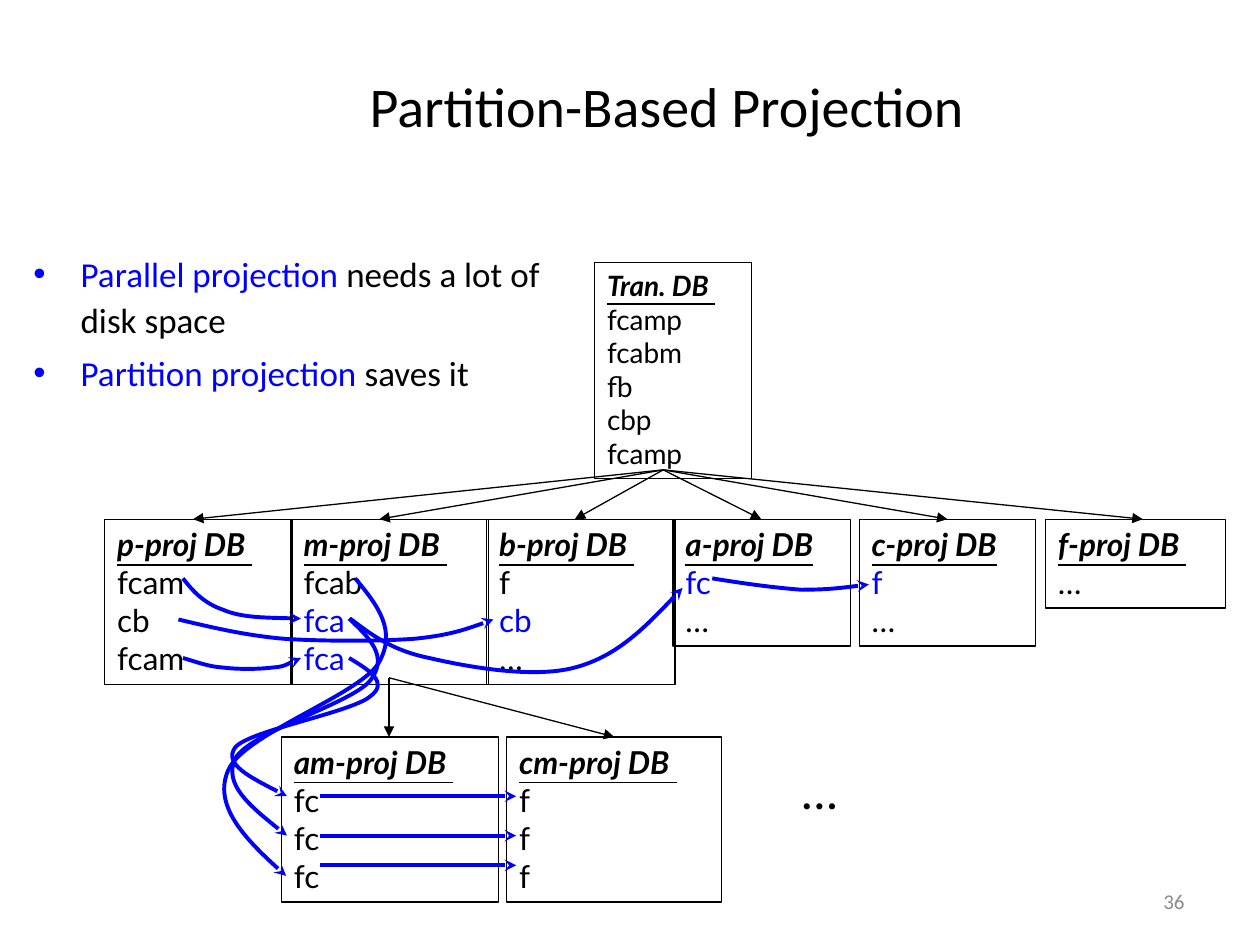
"""Builds the slide on partition-based projection of a transaction database."""
from lxml import etree
from pptx import Presentation
from pptx.dml.color import RGBColor
from pptx.enum import shapes, text
from pptx.oxml.ns import qn
from pptx.util import Pt

BLACK = RGBColor(0, 0, 0)
BLUE = RGBColor(0, 0, 255)
GREY = RGBColor(0x8C, 0x8C, 0x8C)
ROW_TOP, SUB_TOP = 296.7, 421.1
ROOT = (379, 268.5)
SUB_ROOT = (222.3, 387.3)

PROJECTIONS = [
    (59.9, 107.3, 110.3, ["p-proj DB ", "fcam", "cb", "fcam"], ()),
    (166.4, 113, 216.8, ["m-proj DB ", "fcab", "fca", "fca"], (2, 3)),
    (278.1, 107.6, 328.5, ["b-proj DB ", "f", "cb", "…"], (2,)),
    (384.6, 101.5, 435, ["a-proj DB", "fc", "…"], (1,)),
    (491, 100.6, 541.4, ["c-proj DB", "f", "…"], (1,)),
    (597.5, 103, 653, ["f-proj DB ", "…"], ()),
]
SUB_PROJECTIONS = [
    (160.8, 124, 222.3, ["am-proj DB ", "fc", "fc", "fc"], ()),
    (289.5, 123, 351, ["cm-proj DB ", "f", "f", "f"], ()),
]
CURVES = [
    [(104.5, 330.5), (110, 337.5), (116, 344.5), (127.5, 348.5),
     (138, 353), (155.5, 353), (172, 353.5)],
    [(200, 353.5), (211.5, 362), (223, 371.5), (245, 376), (266.5, 381),
     (304.5, 388), (328.5, 381.5), (353, 375), (371.5, 355.5), (390, 336)],
    [(407, 330.5), (425, 333.5), (443.5, 336), (458, 337),
     (473, 337), (484.5, 335.5), (496.5, 334)],
    [(104.5, 376), (111.5, 378), (119, 381), (127.5, 381.5), (135.5, 382.5),
     (147.5, 382.5), (155.5, 381.5), (162.5, 381), (167, 378), (172, 376)],
    [(199.5, 376), (211, 383), (222.5, 390), (211.5, 398), (201, 407),
     (142.5, 417.5), (134.5, 427), (127.5, 436.5), (145.5, 445.5), (164, 455)],
    [(199.5, 353.5), (211, 364.5), (222.5, 375), (211.5, 389), (201, 402),
     (142.5, 418.5), (134.5, 433.5), (127.5, 448), (145.5, 463), (164, 477.5)],
    [(203, 330.5), (215.5, 345.5), (227.5, 360.5), (216, 379.5), (204, 397.5),
     (139, 420), (130.5, 440), (121.5, 460), (142.5, 482), (163.5, 500.5)],
    [(102, 354), (121, 358.5), (139.5, 363), (162, 365), (184.5, 366.5),
     (216.5, 366.5), (237, 365), (257, 363), (269.5, 358.5), (282, 354)],
]


def style(r, size, color=BLACK, name="Calibri"):
    r.font.size, r.font.name = Pt(size), name
    r.font.color.rgb = color


def add_text(s, box, words, size, color=BLACK, name="Calibri",
             align=text.PP_ALIGN.LEFT, anchor=text.MSO_ANCHOR.TOP):
    tf = s.shapes.add_textbox(*map(Pt, box)).text_frame
    tf.word_wrap, tf.vertical_anchor = True, anchor
    tf.text = words
    p = tf.paragraphs[0]
    p.alignment = align
    style(p.runs[0], size, color, name)


def add_bullets(s, box, items):
    tf = s.shapes.add_textbox(*map(Pt, box)).text_frame
    tf.word_wrap = True
    for i, (lead, rest) in enumerate(items):
        p = tf.add_paragraph() if i else tf.paragraphs[0]
        p.line_spacing, p.space_before = 1.1, Pt(4)
        for words, color in ((lead, BLUE), (rest, BLACK)):
            r = p.add_run()
            r.text = words
            style(r, 20, color)
        pPr = p._p.get_or_add_pPr()
        pPr.set("marL", str(Pt(27)))
        pPr.set("indent", str(-Pt(27)))
        etree.SubElement(pPr, qn("a:buFont"), typeface="Arial")
        etree.SubElement(pPr, qn("a:buChar"), char="•")


def add_db(s, left, top, width, lines, blue=(), size=18):
    height = 7.2 + len(lines) * size * 1.21
    sp = s.shapes.add_shape(shapes.MSO_SHAPE.RECTANGLE,
                            *map(Pt, (left, top, width, height)))
    sp.shadow.inherit = False
    sp.fill.background()
    sp.line.color.rgb, sp.line.width = BLACK, Pt(0.75)
    tf = sp.text_frame
    tf.word_wrap, tf.vertical_anchor = True, text.MSO_ANCHOR.TOP
    tf.text = "\n".join(lines)
    for i, p in enumerate(tf.paragraphs):
        p.alignment = text.PP_ALIGN.LEFT
        r = p.runs[0]
        style(r, size, BLUE if i in blue else BLACK, "Lato")
        r.font.bold = r.font.italic = r.font.underline = i == 0


def set_arrow(sp, color, width, head):
    sp.line.color.rgb, sp.line.width = color, Pt(width)
    ln = sp.line._get_or_add_ln()
    etree.SubElement(ln, qn("a:tailEnd"), type=head)


def add_arrow(s, start, end, color=BLACK, width=0.75, head="triangle"):
    sp = s.shapes.add_connector(shapes.MSO_CONNECTOR.STRAIGHT,
                                *map(Pt, start + end))
    set_arrow(sp, color, width, head)
    etree.SubElement(sp._element.spPr, qn("a:effectLst"))


def add_curve(s, pts):
    fb = s.shapes.build_freeform(*map(Pt, pts[0]))
    fb.add_line_segments([tuple(map(Pt, pt)) for pt in pts[1:]], close=False)
    sp = fb.convert_to_shape()
    outline = next(sp._element.iter(qn("a:path")))
    segments = outline.findall(qn("a:lnTo"))
    for i in range(0, len(segments), 3):
        cubic = etree.SubElement(outline, qn("a:cubicBezTo"))
        for segment in segments[i:i + 3]:
            cubic.append(segment[0])
            outline.remove(segment)
    sp.shadow.inherit = False
    sp.fill.background()
    set_arrow(sp, BLUE, 2.25, "stealth")


def add_level(s, top, root, dbs):
    for left, width, target, lines, blue in dbs:
        add_db(s, left, top, width, lines, blue)
    for left, width, target, lines, blue in dbs:
        add_arrow(s, root, (target, top))


def main():
    prs = Presentation()
    prs.slide_width, prs.slide_height = Pt(720), Pt(540)
    s = prs.slides.add_slide(prs.slide_layouts[6])
    add_text(s, (72, 36, 618.3, 48), "Partition-Based Projection", 32,
             align=text.PP_ALIGN.CENTER, anchor=text.MSO_ANCHOR.MIDDLE)
    add_bullets(s, (12, 138.4, 324, 108), [
        ("Parallel projection ", "needs a lot of disk space"),
        ("Partition projection ", "saves it")])
    add_text(s, (516, 500.5, 168, 28.8), "36", 12, GREY,
             align=text.PP_ALIGN.RIGHT, anchor=text.MSO_ANCHOR.MIDDLE)
    add_db(s, 339.8, 150, 89.5,
           ["Tran. DB ", "fcamp", "fcabm", "fb", "cbp", "fcamp"], size=16)
    add_level(s, ROW_TOP, ROOT, PROJECTIONS)
    add_level(s, SUB_TOP, SUB_ROOT, SUB_PROJECTIONS)
    for y in (455, 477.5, 494.5):
        add_arrow(s, (183, y), (295, y), BLUE, 2.25, "stealth")
    for pts in CURVES:
        add_curve(s, pts)
    add_text(s, (450.7, 431, 37.5, 41), "…", 28, name="Lato")
    prs.save("out.pptx")


if __name__ == "__main__":
    main()
